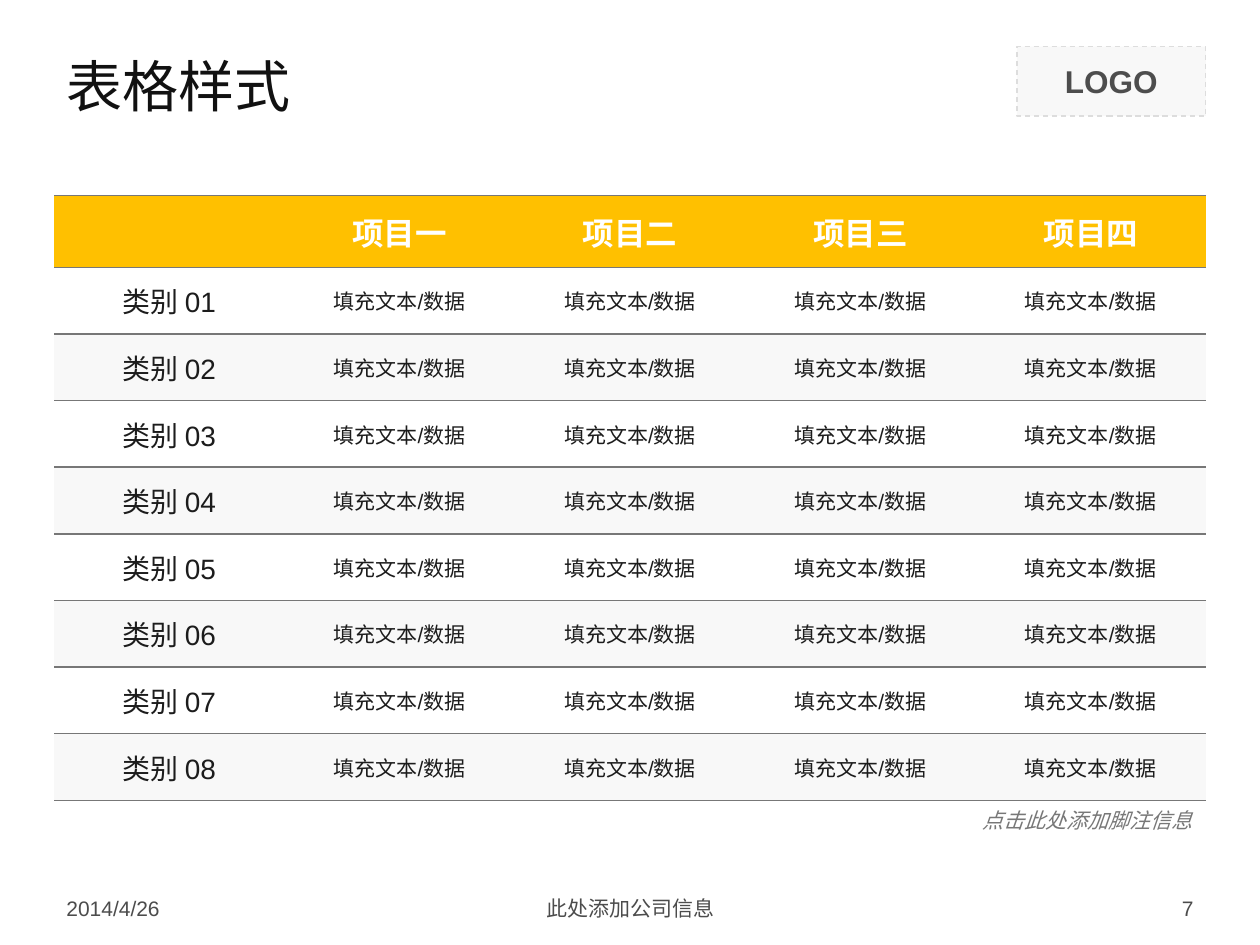
from lxml import etree
from pptx import Presentation
from pptx import util as u
from pptx.dml.color import RGBColor
from pptx.enum import dml, shapes, text
from pptx.oxml import ns

Cm, Pt = u.Cm, u.Pt
ALIGN, ANCHOR, FIT = text.PP_ALIGN, text.MSO_ANCHOR, text.MSO_AUTO_SIZE

TITLE = "表格样式"
HEADINGS = ["", "项目一", "项目二", "项目三", "项目四"]
CATEGORIES = [f"类别 {number:02}" for number in range(1, 9)]
FILLER = "填充文本/数据"
ROWS = [HEADINGS] + [[name] + [FILLER] * 4 for name in CATEGORIES]

# text, left, width, alignment
FOOTERS = [
    ("2014/4/26", 1.09, 5.93, ALIGN.LEFT),
    ("此处添加公司信息", 8.68, 8.05, ALIGN.CENTER),
    ("7", 18.38, 5.93, ALIGN.RIGHT),
]
FOOTNOTE = "点击此处添加脚注信息"

LEFT, WIDTH = 1.09, 23.22
TABLE_TOP, TABLE_HEIGHT, HEADER_HEIGHT = 3.94, 12.2, 1.45
ROW_HEIGHT = (TABLE_HEIGHT - HEADER_HEIGHT) / len(CATEGORIES)

YELLOW, WHITE, PALE, RULE = "FFC000", "FFFFFF", "F8F8F8", "777777"
HEADER_STYLE = dict(size=18, color=WHITE, bold=True)
CATEGORY_STYLE = dict(size=16, color="1C1C1C", bold=False)
DATA_STYLE = dict(size=12, color="1C1C1C", bold=False)
FOOTER_STYLE = dict(size=12, color="4C4C4C")


def rgb(value):
    return RGBColor.from_string(value)


def write(frame, words, align, size, color, name="Arial", **style):
    para = frame.paragraphs[0]
    para.alignment = align
    span = para.add_run()
    span.text = words
    span.font.color.rgb = rgb(color)
    for key, value in dict(style, name=name, size=Pt(size)).items():
        setattr(span.font, key, value)


def add_text(page, place, words, align, anchor=ANCHOR.MIDDLE, wrap=True,
             fit=FIT.NONE, **style):
    frame = page.shapes.add_textbox(*map(Cm, place)).text_frame
    frame.word_wrap, frame.auto_size = wrap, fit
    frame.vertical_anchor = anchor
    write(frame, words, align, **style)


def rule_cell(cell):
    """Give a cell lines above and below, and none at its sides."""
    properties = cell._tc.get_or_add_tcPr()
    for side in ("lnL", "lnR", "lnT", "lnB"):
        line = etree.SubElement(properties, ns.qn(f"a:{side}"), w=str(Pt(1)))
        if side in ("lnL", "lnR"):
            etree.SubElement(line, ns.qn("a:noFill"))
        else:
            fill = etree.SubElement(line, ns.qn("a:solidFill"))
            etree.SubElement(fill, ns.qn("a:srgbClr"), val=RULE)


def add_logo_box(page):
    box = page.shapes.add_shape(shapes.MSO_SHAPE.RECTANGLE,
                                *map(Cm, (20.5, 0.94, 3.81, 1.4)))
    box.shadow.inherit = False
    box.fill.solid()
    box.fill.fore_color.rgb = rgb(PALE)
    box.line.color.rgb = rgb("DDDDDD")
    box.line.width = Pt(0.75)
    box.line.dash_style = dml.MSO_LINE.DASH
    box.text_frame.vertical_anchor = ANCHOR.MIDDLE
    write(box.text_frame, "LOGO", ALIGN.CENTER, 18, "4D4D4D", bold=True)


def add_data_table(page):
    place = (LEFT, TABLE_TOP, WIDTH, TABLE_HEIGHT)
    table = page.shapes.add_table(len(ROWS), len(HEADINGS), *map(Cm, place)).table
    for column in table.columns:
        column.width = Cm(WIDTH / len(HEADINGS))
    for r, row in enumerate(ROWS):
        table.rows[r].height = Cm(ROW_HEIGHT if r else HEADER_HEIGHT)
        fill = (PALE, WHITE)[r % 2] if r else YELLOW
        for c, words in enumerate(row):
            cell = table.cell(r, c)
            rule_cell(cell)
            cell.fill.solid()
            cell.fill.fore_color.rgb = rgb(fill)
            cell.vertical_anchor = ANCHOR.MIDDLE
            if words:
                body_style = DATA_STYLE if c else CATEGORY_STYLE
                write(cell.text_frame, words, ALIGN.CENTER,
                      **(body_style if r else HEADER_STYLE))


def main():
    deck = Presentation()
    deck.slide_width, deck.slide_height = Cm(25.4), Cm(19.05)
    page = deck.slides.add_slide(deck.slide_layouts[6])
    add_logo_box(page)
    add_text(page, (LEFT, 0.71, WIDTH, 2), TITLE, ALIGN.LEFT,
             size=32, color="111111", name="Montserrat")
    add_data_table(page)
    for words, left, width, align in FOOTERS:
        add_text(page, (left, 17.93, width, 0.74), words, align, **FOOTER_STYLE)
    add_text(page, (19.52, 16.15, 4.78, 0.77), FOOTNOTE, ALIGN.RIGHT,
             anchor=ANCHOR.TOP, wrap=False, fit=FIT.SHAPE_TO_FIT_TEXT,
             size=12, color=RULE, italic=True)
    deck.save("out.pptx")


if __name__ == "__main__":
    main()
